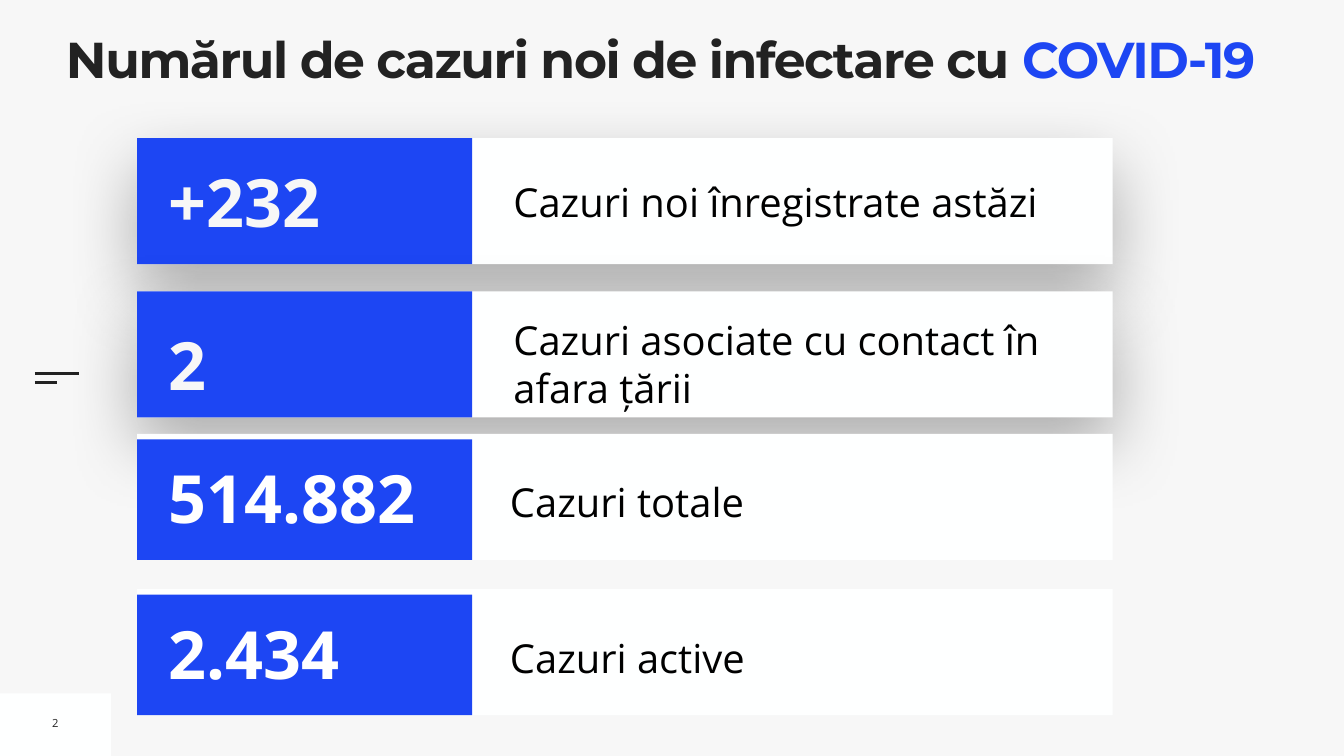
from lxml import etree
from pptx import Presentation
from pptx.dml.color import RGBColor
from pptx.enum.shapes import MSO_CONNECTOR, MSO_SHAPE
from pptx.enum.text import MSO_ANCHOR, PP_ALIGN
from pptx.oxml.ns import qn
from pptx.util import Inches, Pt

RECTANGLE = MSO_SHAPE.RECTANGLE
STRAIGHT = MSO_CONNECTOR.STRAIGHT
TOP, MIDDLE = MSO_ANCHOR.TOP, MSO_ANCHOR.MIDDLE
LEFT, CENTER = PP_ALIGN.LEFT, PP_ALIGN.CENTER

COLORS = {"paper": "F7F7F7", "panel": "FEFFFF", "blue": "1D46F3",
          "ink": "222222", "black": "000000", "white": "FFFFFF"}

presentation = Presentation()
presentation.slide_width, presentation.slide_height = Inches(26.67), Inches(15)
slide = presentation.slides.add_slide(presentation.slide_layouts[6])
slide.background.fill.solid()
slide.background.fill.fore_color.rgb = RGBColor.from_string(COLORS["paper"])

# Grid of 26.67 columns by 15 rows
COLUMN = presentation.slide_width / 26.67
ROW = presentation.slide_height / 15


def add_panel(shapes, left, top, width, height, color):
    shape = shapes.add_shape(RECTANGLE, int(left * COLUMN), int(top * ROW),
                             int(width * COLUMN), int(height * ROW))
    shape.shadow.inherit = False
    shape.fill.solid()
    shape.fill.fore_color.rgb = RGBColor.from_string(COLORS[color])
    shape.line.fill.background()
    return shape


def add_text(shapes, box, runs, font, inset=0.1, anchor=MIDDLE, wrap=True, **paragraph_format):
    left, top, width, height = box
    shape = shapes.add_textbox(int(left * COLUMN), int(top * ROW),
                               int(width * COLUMN), int(height * ROW))
    frame = shape.text_frame
    frame.word_wrap, frame.vertical_anchor = wrap, anchor
    for side in ("left", "top", "right", "bottom"):
        setattr(frame, f"margin_{side}", Inches(inset))
    paragraph = frame.paragraphs[0]
    for name, value in paragraph_format.items():
        setattr(paragraph, name, value)
    for text, color in runs:
        run = paragraph.add_run()
        run.text = text
        for name, value in font.items():
            setattr(run.font, name, value)
        run.font.color.rgb = RGBColor.from_string(COLORS[color])
    return paragraph


# Page number corner and the two short rules at the left edge
add_panel(slide.shapes, 0, 13.76, 2.2, 1.24, "panel")
for top, right in ((7.41, 1.57), (7.59, 1.13)):
    rule = slide.shapes.add_connector(STRAIGHT, int(0.69 * COLUMN), int(top * ROW),
                                      int(right * COLUMN), int(top * ROW))
    rule.line.color.rgb = RGBColor.from_string(COLORS["ink"])
    rule.line.width = Pt(3)
    etree.SubElement(rule._element.spPr, qn("a:effectLst"))
add_text(slide.shapes, (0.93, 14.09, 0.34, 0.51), [("2", "ink")],
         {"name": "Open Sans", "size": Pt(16)}, wrap=False, alignment=CENTER)

# Title
title = add_text(slide.shapes, (1.31, 0.78, 23.94, 1.58),
                 [("Numărul de cazuri noi de infectare cu ", "ink"), ("COVID-19", "blue")],
                 {"name": "Montserrat", "size": Pt(72), "bold": True},
                 inset=0, anchor=TOP, alignment=LEFT, line_spacing=0.8)
for run in title.runs:
    run.font._element.set("spc", "-200")

# Figure cards: panel top, blue offset, number top, label box, number, label, raised
CARDS = [
    (11.69, 0.11, 12.05, (10.12, 12.27, 11.58, 1.25), "2.434", "Cazuri active", False),
    (2.74, 0, 3.09, (10.09, 3.41, 11.76, 1.16), "+232", "Cazuri noi înregistrate astăzi", True),
    (5.78, 0, 6.32, (10.09, 6.16, 11.76, 2.12), "2",
     "Cazuri asociate cu contact în afara țării", True),
    (8.61, 0.11, 8.96, (10.12, 9.25, 11.58, 1.12), "514.882", "Cazuri totale", False),
]
CARD_LEFT, CARD_WIDTH, CARD_HEIGHT, BLUE_WIDTH = 2.72, 19.36, 2.5, 6.65
LABEL_FONT = {"name": "Open Sans", "size": Pt(57)}
NUMBER_FONT = {"name": "Open Sans", "size": Pt(95), "bold": True}
SPACED = {"inset": 0, "line_spacing": 1.3, "space_before": Pt(20)}

for top, offset, number_top, label_box, number, label, raised in CARDS:
    shapes = slide.shapes.add_group_shape().shapes
    panel = add_panel(shapes, CARD_LEFT, top, CARD_WIDTH, CARD_HEIGHT, "panel")
    if raised:
        effects = panel._element.spPr.find(qn("a:effectLst"))
        shadow = etree.SubElement(effects, qn("a:outerShdw"), blurRad=str(Pt(100)),
                                  dist=str(Pt(40)), dir="5400000", rotWithShape="0")
        shade = etree.SubElement(shadow, qn("a:srgbClr"), val=COLORS["black"])
        etree.SubElement(shade, qn("a:alpha"), val="30000")
    add_text(shapes, label_box, [(label, "black")], LABEL_FONT, **({} if raised else SPACED))
    add_panel(shapes, CARD_LEFT, top + offset, BLUE_WIDTH, CARD_HEIGHT - offset, "blue")
    add_text(shapes, (3.25, number_top, 6.03, 1.8),
             [(number, "paper" if raised else "white")], NUMBER_FONT)

presentation.save("out.pptx")
